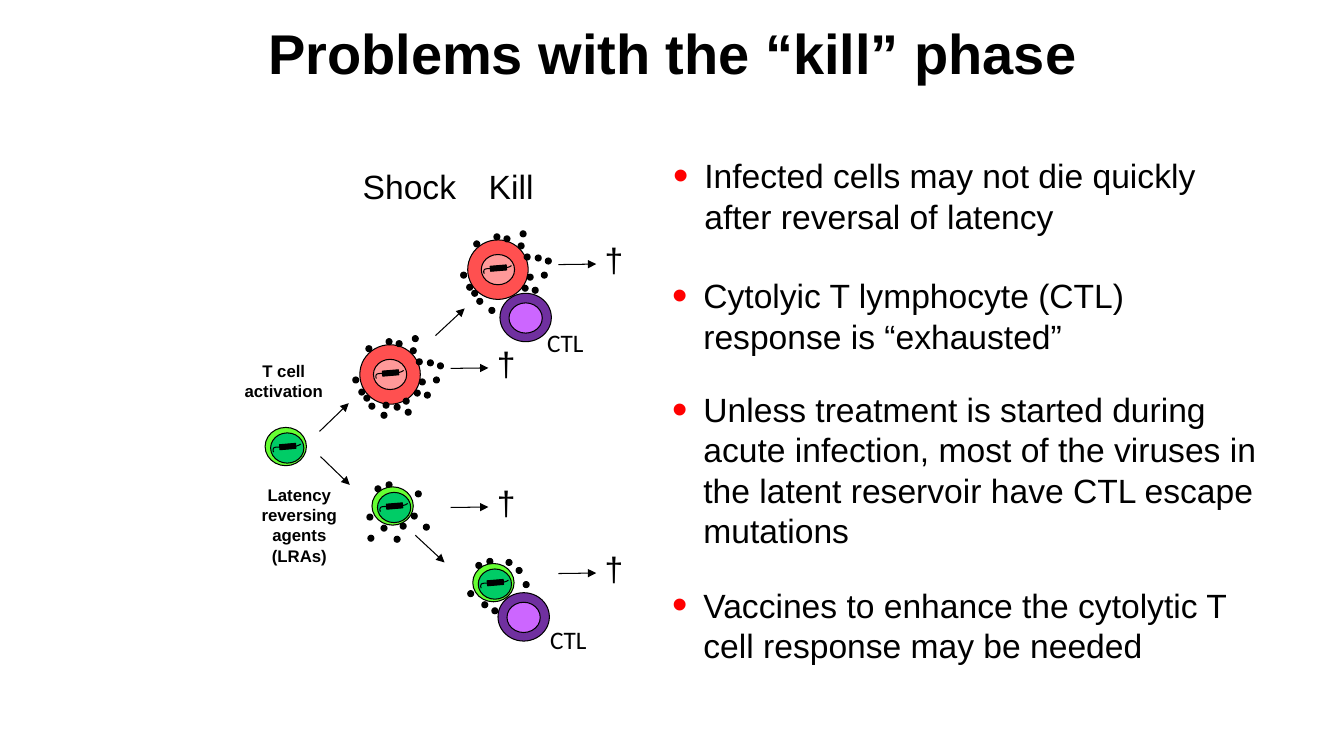
from lxml import etree
from pptx import Presentation
from pptx.dml.color import RGBColor as RGB
from pptx.enum.shapes import MSO_CONNECTOR as CONN, MSO_SHAPE as SHAPE
from pptx.enum.text import MSO_AUTO_SIZE as AUTO, PP_ALIGN as ALIGN
from pptx.oxml.ns import qn
from pptx.util import Inches, Pt

CELL = Inches(0.1)
COLS, ROWS = 133.33, 75

COLORS = {
    "ink": "000000", "bullet": "FF0000",
    "resting": "66FF33", "resting_core": "00CC66",
    "active": "FF5050", "active_core": "FF9999",
    "ctl": "7030A0", "ctl_core": "CC66FF",
}
BODIES = {
    "resting": (4.1, 3.8, 0.55, 0.55),
    "active": (6.0, 5.9, 1.35, 1.45),
    "ctl": (5.1, 4.8, 0.9, 0.95),
}
CORE_W, CORE_H = 3.3, 3.0
DOT = 0.6
STRAND = [
    [(0.3, 1.9), (0.25, 1.8), (0.2, 1.7), (0.3, 1.5)],
    [(0.3, 1.5), (0.4, 1.4), (0.7, 1.4), (0.7, 1.4)],
    [(0.7, 1.4), (1.2, 1.4), (2.5, 1.5), (3.0, 1.1)],
]
ACTIVE_DOTS = [
    (5.6, 1.4), (0.6, 0.1), (5.9, 3.4), (3.6, -0.4), (-0.7, 3.2), (0.4, 5.0),
    (5.0, 0.3), (5.4, 4.5), (0.9, 5.8), (7.7, 1.8), (2.6, -0.6), (5.2, -0.9),
    (6.7, 1.5), (7.3, 3.2), (-0.1, 4.4), (6.4, 4.7), (2.1, 6.7),
]
ACTIVE_LOWER_DOTS = [(2.3, 5.7), (4.3, 5.3), (3.4, 5.9), (4.5, 6.4)]
RESTING_DOTS = [(4.3, 0.4), (0.3, -0.1), (-0.5, 2.7), (0.9, 3.8), (1.4, -0.5)]
RESTING_FREE_DOTS = [(2.8, 3.6), (3.9, 2.6), (-0.4, 4.8), (2.2, 4.9), (5.1, 3.7)]
RESTING_BOUND_DOTS = [(3.3, -0.4), (5.0, 1.8), (1.9, 4.4)]

BULLETS = [
    (60.8, 14.9, 9.1, "Infected cells may not die quickly after reversal of latency"),
    (60.7, 26.8, 9.1, "Cytolyic T lymphocyte (CTL) response is “exhausted”"),
    (60.7, 38.1, 17.2, "Unless treatment is started during acute infection, most of the "
                       "viruses in the latent reservoir have CTL escape mutations"),
    (60.7, 57.5, 9.1, "Vaccines to enhance the cytolytic T cell response may be needed"),
]
BRANCHES = [
    ((31.7, 42.8), (34.6, 40.0)), ((31.8, 45.3), (34.7, 48.1)),
    ((41.2, 53.1), (44.1, 55.8)), ((43.2, 33.3), (46.1, 30.6)),
]
DEATHS = [(44.7, 36.55), (44.7, 50.35), (55.4, 56.9), (55.4, 26.25)]


def grid(n):
    return round(n * CELL)


def color(name):
    return RGB.from_string(COLORS[name])


def outline(line):
    line.color.rgb = color("ink")
    line.width = Pt(0.75)


def add_text(slide, x, y, w, h, lines, size, bold=False, align=None,
             font="Arial", wrap=True):
    tf = slide.shapes.add_textbox(*map(grid, (x, y, w, h))).text_frame
    tf.word_wrap = wrap
    tf.auto_size = AUTO.SHAPE_TO_FIT_TEXT
    for i, line in enumerate(lines):
        p = tf.add_paragraph() if i else tf.paragraphs[0]
        p.alignment = align
        r = p.add_run()
        r.text = line
        r.font.name = font
        r.font.size = Pt(size)
        r.font.bold = bold
        r.font.color.rgb = color("ink")
    return tf


def add_bullet(slide, x, y, h, text):
    p = add_text(slide, x, y, 65, h, [text], 24).paragraphs[0]
    p.level = 1
    pPr = p._p.get_or_add_pPr()
    pPr.set("marL", str(grid(8.1)))
    pPr.set("indent", str(grid(-3.1)))
    clr = etree.SubElement(pPr, qn("a:buClr"))
    etree.SubElement(clr, qn("a:srgbClr"), val=COLORS["bullet"])
    etree.SubElement(pPr, qn("a:buSzPct"), val="130000")
    etree.SubElement(pPr, qn("a:buFont"), typeface="Arial")
    etree.SubElement(pPr, qn("a:buChar"), char="•")


def add_arrow(slide, start, end):
    ends = map(grid, (*start, *end))
    cx = slide.shapes.add_connector(CONN.STRAIGHT, *ends)
    outline(cx.line)
    etree.SubElement(cx.line._get_or_add_ln(), qn("a:tailEnd"), type="triangle")
    etree.SubElement(cx._element.spPr, qn("a:effectLst"))


def add_death(slide, x, y):
    add_text(slide, x + 3.6, y - 3, 3.9, 5.1, ["†"], 24, wrap=False)
    add_arrow(slide, (x, y), (x + 3.75, y - 0.05))


def add_solid(group, kind, x, y, w, h, fill):
    sp = group.shapes.add_shape(kind, *map(grid, (x, y, w, h)))
    sp.shadow.inherit = False
    sp.fill.solid()
    sp.fill.fore_color.rgb = color(fill)
    outline(sp.line)
    return sp


def add_body(group, x, y, kind):
    w, h, dx, dy = BODIES[kind]
    add_solid(group, SHAPE.OVAL, x, y, w, h, kind)
    add_solid(group, SHAPE.OVAL, x + dx, y + dy, CORE_W, CORE_H, kind + "_core")
    return x + dx, y + dy


def bezier(points, t):
    weights = ((1 - t) ** 3, 3 * t * (1 - t) ** 2, 3 * t * t * (1 - t), t ** 3)
    return [sum(k * v for k, v in zip(weights, axis)) for axis in zip(*points)]


def add_provirus(group, x, y):
    steps = 8
    strand = [STRAND[0][0]] + [bezier(curve, i / steps) for curve in STRAND
                               for i in range(1, steps + 1)]
    points = [(grid(x + dx), grid(y + dy)) for dx, dy in strand]
    builder = group.shapes.build_freeform(*points[0])
    builder.add_line_segments(points[1:], close=False)
    sp = builder.convert_to_shape()
    sp.shadow.inherit = False
    sp.fill.background()
    outline(sp.line)
    add_solid(group, SHAPE.RECTANGLE, x + 0.9, y + 1.1, 1.6, 0.5, "ink").rotation = 355.2


def add_dots(group, x, y, dots):
    for dx, dy in dots:
        add_solid(group, SHAPE.OVAL, x + dx, y + dy, DOT, DOT, "ink")


def add_infected(slide, x, y, kind, under=(), over=(), ctl=None):
    group = slide.shapes.add_group_shape()
    add_dots(group, x, y, under)
    add_provirus(group, *add_body(group, x, y, kind))
    add_dots(group, x, y, over)
    if ctl:
        add_body(group, *ctl, "ctl")


def main():
    prs = Presentation()
    prs.slide_width, prs.slide_height = grid(COLS), grid(ROWS)
    s = prs.slides.add_slide(prs.slide_layouts[6])

    add_text(s, 16.7, 1.3, 100, 7.7, ["Problems with the “kill” phase"], 40, True, ALIGN.CENTER)
    for bullet in BULLETS:
        add_bullet(s, *bullet)

    add_text(s, 22.7, 35.3, 10.9, 5, ["T cell activation"], 12, True, ALIGN.CENTER)
    add_text(s, 24.2, 47.6, 11, 9.1, ["Latency reversing", "agents (LRAs)"], 12, True, ALIGN.CENTER)
    for start, end in BRANCHES:
        add_arrow(s, start, end)
    for x, y in DEATHS:
        add_death(s, x, y)

    add_infected(s, 26.3, 42.4, "resting")
    add_infected(s, 35.7, 34.2, "active", over=ACTIVE_DOTS + ACTIVE_LOWER_DOTS)
    add_infected(s, 36.9, 48.3, "resting", under=RESTING_DOTS + RESTING_FREE_DOTS)
    add_infected(s, 46.9, 55.9, "resting", under=RESTING_DOTS + RESTING_BOUND_DOTS,
                 ctl=(49.4, 58.8))
    add_infected(s, 46.4, 23.8, "active", over=ACTIVE_DOTS, ctl=(49.6, 29.1))

    add_text(s, 35, 16, 11.4, 5, ["Shock"], 24, wrap=False)
    add_text(s, 47.5, 16, 8, 5, ["Kill"], 24)
    for x, y in ((53.3, 32), (53.6, 61.4)):
        add_text(s, x, y, 5.7, 4, ["CTL"], 18, font="Calibri", wrap=False)

    prs.save("out.pptx")


if __name__ == "__main__":
    main()
